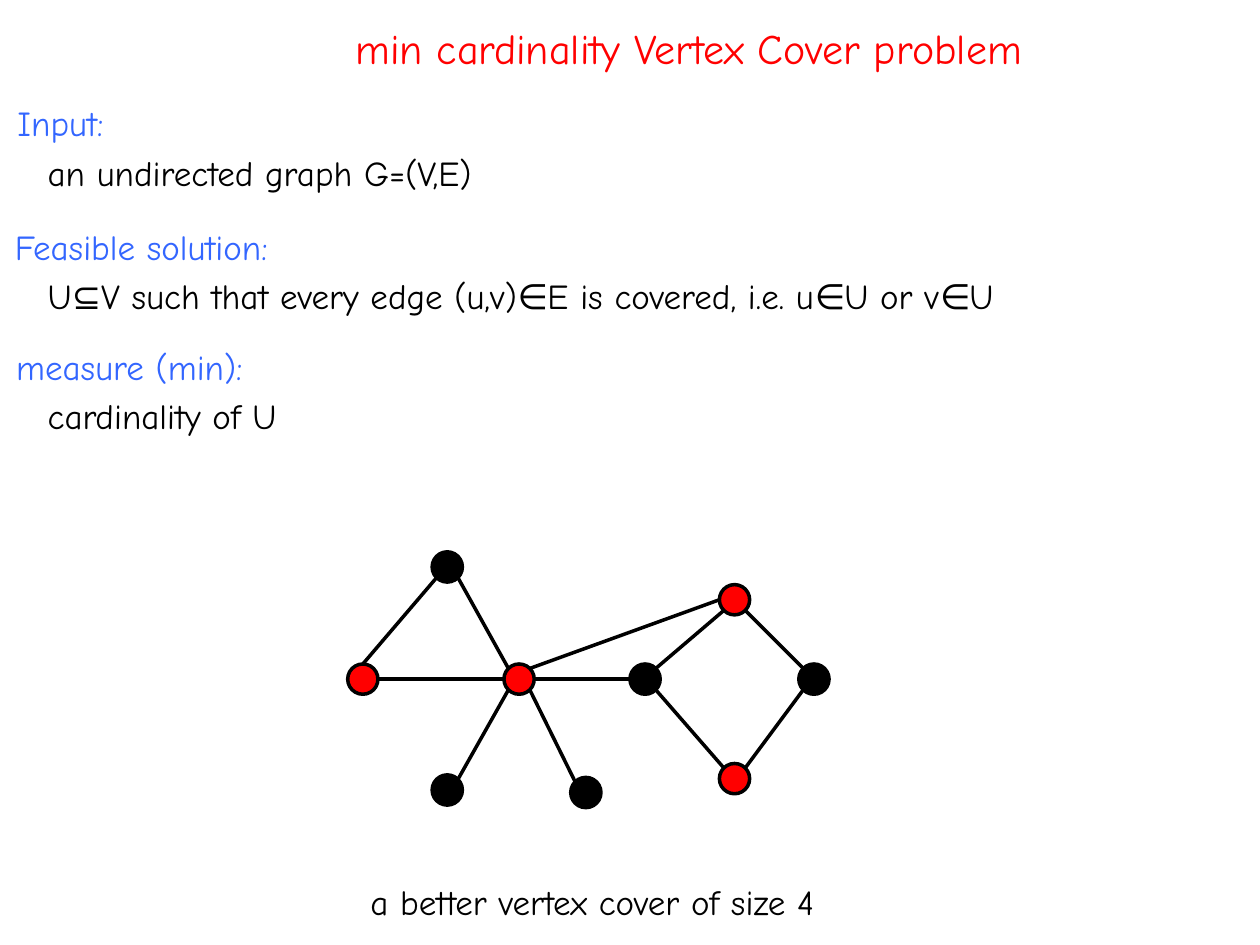
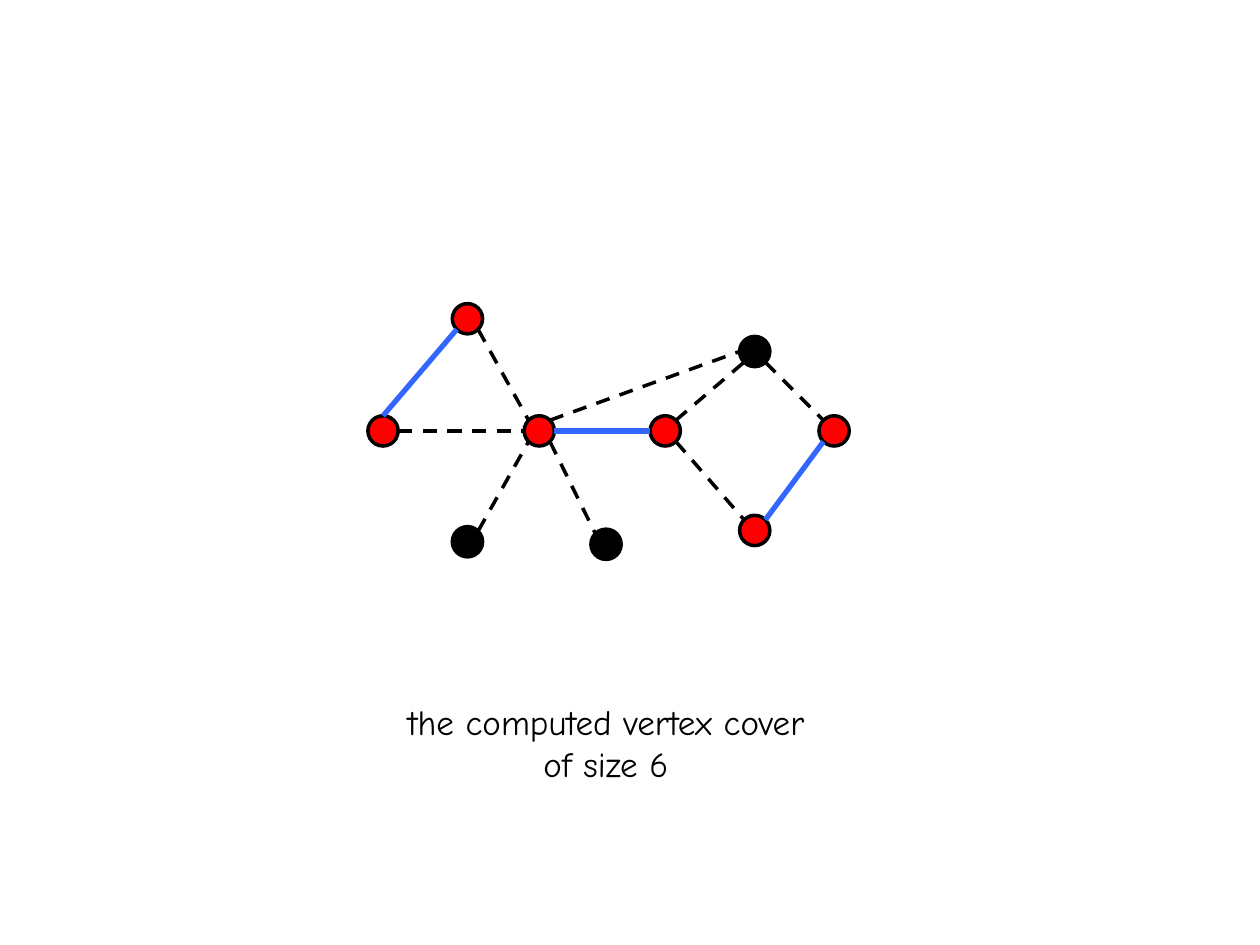
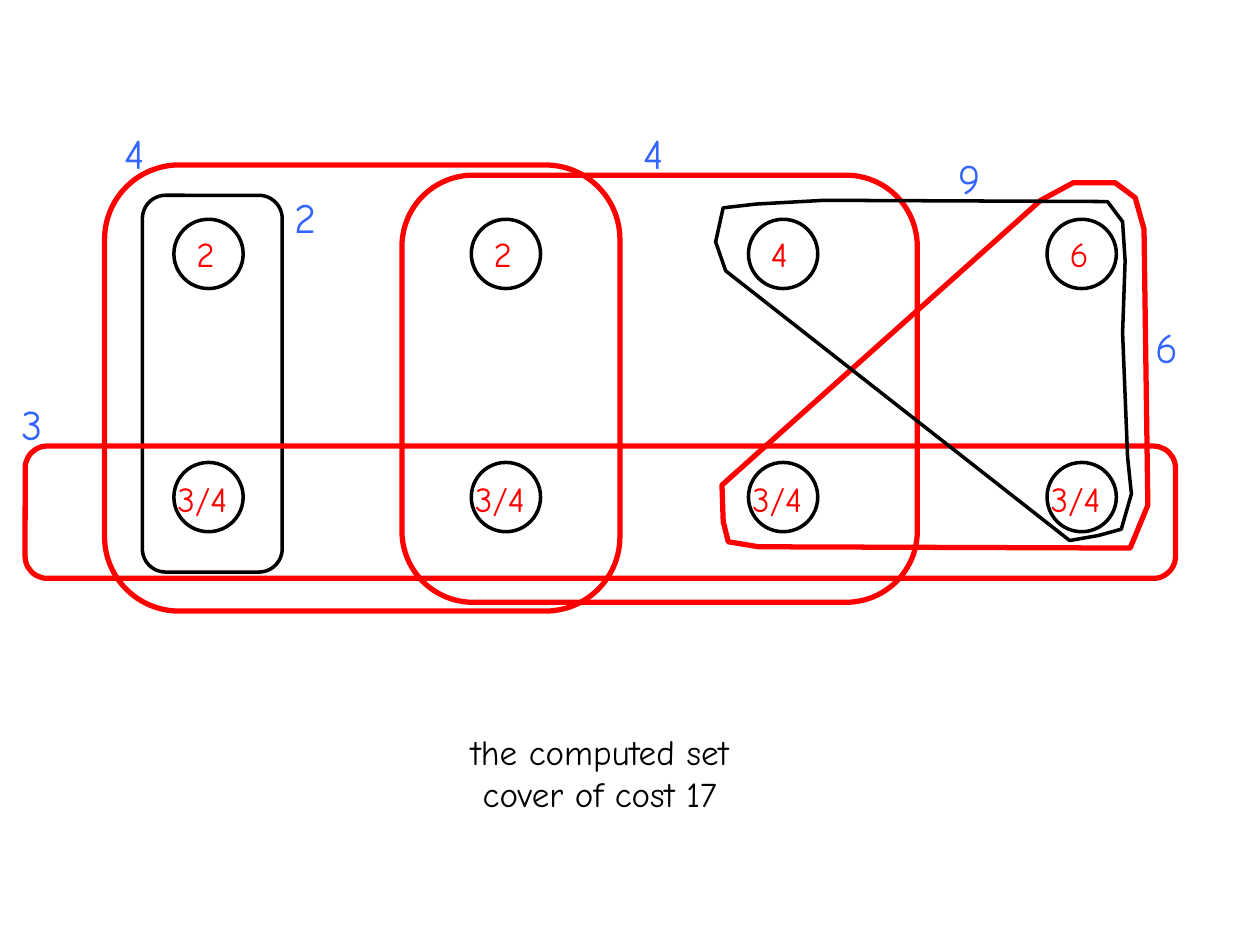
from math import sqrt

from lxml import etree
from pptx import Presentation
from pptx.dml.color import RGBColor
from pptx.enum.dml import MSO_LINE
from pptx.enum.shapes import MSO_CONNECTOR, MSO_SHAPE
from pptx.enum.text import MSO_ANCHOR, PP_ALIGN
from pptx.oxml.ns import qn
from pptx.util import Inches, Pt

DASH = MSO_LINE.DASH
STRAIGHT = MSO_CONNECTOR.STRAIGHT
OVAL, ROUND = MSO_SHAPE.OVAL, MSO_SHAPE.ROUNDED_RECTANGLE
TOP = MSO_ANCHOR.TOP
LEFT, MID, RIGHT = PP_ALIGN.LEFT, PP_ALIGN.CENTER, PP_ALIGN.RIGHT
TITLE_ONLY, BLANK = 5, 6

FONT = "Comic Neue"
HUES = {"red": "FF0000", "blue": "3366FF", "black": "000000"}

NODE = 0.24
NODES = {
    "left": (2.76, 5.27), "peak": (3.43, 4.38), "hub": (4, 5.27),
    "leaf1": (3.43, 6.15), "leaf2": (4.53, 6.17), "mid": (5, 5.27),
    "top": (5.71, 4.64), "right": (6.34, 5.27), "low": (5.71, 6.06),
}
DIAG = 1 / sqrt(2)
SITES = {
    "n": (0, -1), "w": (-1, 0), "e": (1, 0),
    "nw": (-DIAG, -DIAG), "ne": (DIAG, -DIAG),
    "sw": (-DIAG, DIAG), "se": (DIAG, DIAG),
}
# node, side, node, side
EDGES = [
    ("left", "n", "peak", "sw"), ("left", "e", "hub", "w"),
    ("peak", "se", "hub", "nw"), ("leaf1", "ne", "hub", "sw"),
    ("hub", "se", "leaf2", "nw"), ("hub", "e", "mid", "w"),
    ("mid", "ne", "top", "sw"), ("top", "se", "right", "nw"),
    ("mid", "se", "low", "nw"), ("low", "ne", "right", "sw"),
    ("hub", "ne", "top", "w"),
]

ITEM = 0.55
COLS = (1.38, 3.74, 5.94, 8.31)
ROWS = (1.74, 3.67)
RED_SET = [
    (5.73, 3.85), (8.26, 1.59), (8.52, 1.45), (8.85, 1.45), (9.01, 1.57),
    (9.08, 1.82), (9.11, 4.01), (8.97, 4.35), (6.02, 4.34), (5.78, 4.3),
    (5.74, 4.14),
]
BLACK_SET = [
    (5.68, 1.92), (5.74, 1.65), (6, 1.62), (6.54, 1.59), (8.79, 1.6),
    (8.91, 1.76), (8.93, 2.07), (8.91, 2.64), (8.95, 3.63), (8.98, 3.92),
    (8.9, 4.2), (8.72, 4.25), (8.49, 4.29), (5.76, 2.15),
]


def rgb(hue):
    return RGBColor.from_string(HUES[hue])


def write(frame, words, hue, size, align):
    frame.word_wrap = True
    frame.vertical_anchor = TOP
    para = frame.paragraphs[0]
    para.alignment = align
    run = para.add_run()
    run.text = words
    run.font.name = FONT
    run.font.size = Pt(size)
    run.font.color.rgb = rgb(hue)


def label(slide, box, words, hue="black", size=20, align=LEFT):
    shape = slide.shapes.add_textbox(*map(Inches, box))
    write(shape.text_frame, words, hue, size, align)


def title(slide, words):
    shape = slide.shapes.title
    shape.left, shape.top, shape.width, shape.height = map(
        Inches, (1.79, 0.13, 6.42, 0.94))
    write(shape.text_frame, words, "red", 24, RIGHT)


def style(shape, hue, width, fill=None):
    shape.shadow.inherit = False
    shape.line.color.rgb = rgb(hue)
    shape.line.width = Pt(width)
    if fill:
        shape.fill.solid()
        shape.fill.fore_color.rgb = rgb(fill)
    else:
        shape.fill.background()


def outline(slide, kind, box, hue="black", width=2, fill=None):
    shape = slide.shapes.add_shape(kind, *map(Inches, box))
    style(shape, hue, width, fill)


def loop(slide, points, hue, width):
    """Draw a closed outline through the points."""
    spots = [(Inches(x), Inches(y)) for x, y in points]
    pen = slide.shapes.build_freeform(*spots[0])
    pen.add_line_segments(spots[1:], close=True)
    style(pen.convert_to_shape(), hue, width)


def site(node, side, shift):
    """Return the point on a node's rim at the given side."""
    return [Inches(pos + move + NODE / 2 * (1 + way))
            for pos, move, way in zip(NODES[node], shift, SITES[side])]


def edge(slide, start, end, hue, width, dash):
    wire = slide.shapes.add_connector(STRAIGHT, *start, *end)
    wire.line.color.rgb = rgb(hue)
    wire.line.width = Pt(width)
    if dash:
        wire.line.dash_style = dash
    etree.SubElement(wire._element.spPr, qn("a:effectLst"))


def graph(slide, cover, shift=(0, 0), match=(), dash=None):
    """Draw the graph with the cover in red and matched edges in blue."""
    for name, (x, y) in NODES.items():
        box = (x + shift[0], y + shift[1], NODE, NODE)
        outline(slide, OVAL, box, fill="red" if name in cover else "black")
    for tail, out, head, into in EDGES:
        look = ("blue", 3, None) if (tail, head) in match else ("black", 2, dash)
        edge(slide, site(tail, out, shift), site(head, into, shift), *look)


def problem(deck):
    slide = deck.slides.add_slide(deck.slide_layouts[TITLE_ONLY])
    title(slide, "min cardinality Vertex Cover problem")
    parts = [
        (0.04, 0.76, "Input:", "an undirected graph G=(V,E)"),
        (0.02, 1.74, "Feasible solution:",
         "U⊆V such that every edge (u,v)∈E is covered, i.e. u∈U or v∈U"),
        (0.03, 2.69, "measure (min):", "cardinality of U"),
    ]
    for x, y, head, body in parts:
        label(slide, (x, y, 2.54, 0.44), head, "blue")
        label(slide, (0.28, y + 0.39, 9.64, 0.44), body)
    graph(slide, {"left", "hub", "top", "low"})
    label(slide, (2.84, 6.94, 4.31, 0.44), "a better vertex cover of size 4")


def matching(deck):
    slide = deck.slides.add_slide(deck.slide_layouts[BLANK])
    match = {("left", "peak"), ("hub", "mid"), ("low", "right")}
    cover = {name for pair in match for name in pair}
    graph(slide, cover, (0.16, -1.97), match, DASH)
    label(slide, (3.06, 5.51, 3.5, 0.77),
          "the computed vertex cover of size 6", align=MID)


def sets(deck):
    slide = deck.slides.add_slide(deck.slide_layouts[BLANK])
    for y in ROWS:
        for x in COLS:
            outline(slide, OVAL, (x, y, ITEM, ITEM))
    outline(slide, ROUND, (0.83, 1.31, 4.09, 3.54), "red", 3)
    outline(slide, ROUND, (3.19, 1.39, 4.09, 3.39), "red", 3)
    outline(slide, ROUND, (1.13, 1.55, 1.11, 2.99))
    outline(slide, ROUND, (0.2, 3.54, 9.13, 1.05), "red", 3)
    loop(slide, RED_SET, "red", 3)
    loop(slide, BLACK_SET, "black", 2)
    costs = [("4", 0.89, 0.96), ("4", 5.01, 0.96), ("2", 2.24, 1.47),
             ("3", 0.07, 3.11), ("9", 7.51, 1.16), ("6", 9.07, 2.5)]
    for cost, x, y in costs:
        label(slide, (x, y, 0.5, 0.5), cost, "blue", 24)
    for x, price in zip(COLS, "2246"):
        label(slide, (x + 0.08, ROWS[0] + 0.06, 0.55, 0.44), price, "red")
        label(slide, (x - 0.07, ROWS[1] + 0.07, 0.69, 0.44), "3/4", "red")
    label(slide, (3.5, 5.75, 2.52, 0.77),
          "the computed set cover of cost 17", align=MID)


def main():
    deck = Presentation()
    deck.slide_width, deck.slide_height = Inches(10), Inches(7.5)
    problem(deck)
    matching(deck)
    sets(deck)
    deck.save("out.pptx")


if __name__ == "__main__":
    main()
